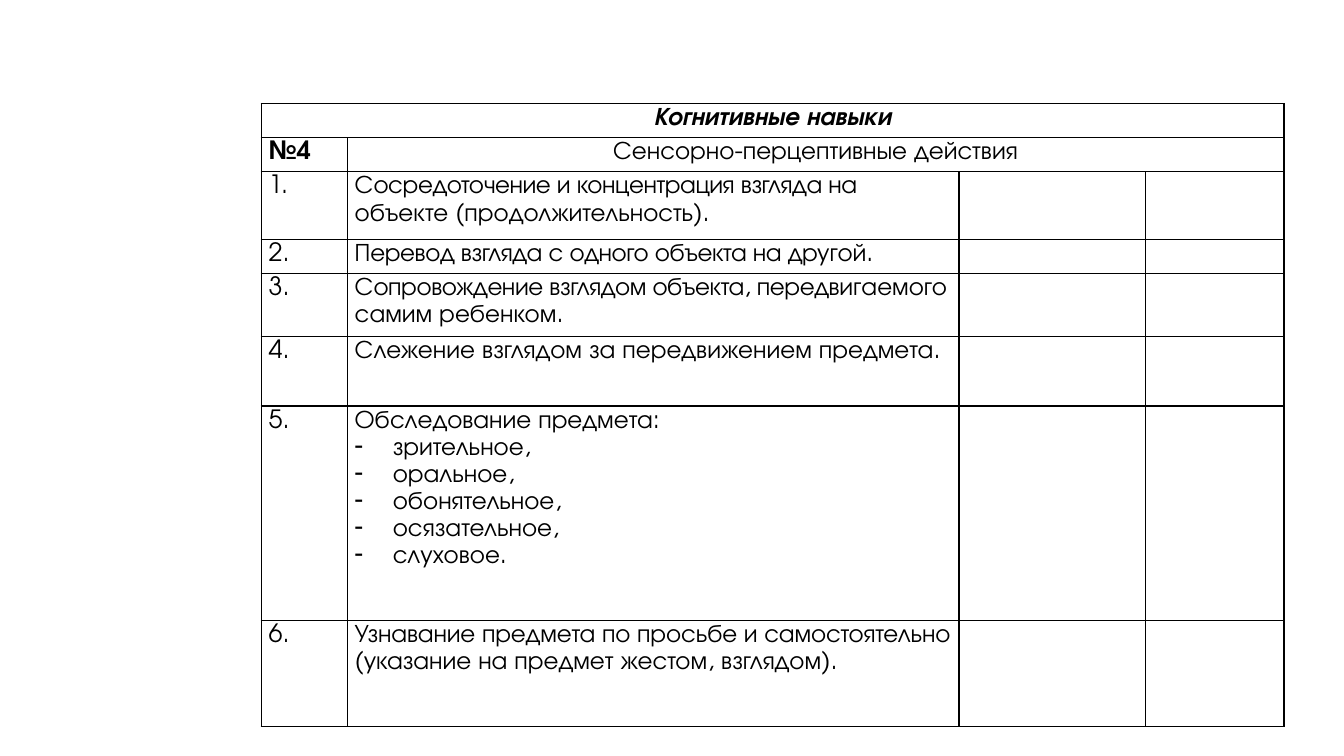
from pptx import Presentation
from pptx import util as u
from pptx.dml.color import RGBColor
from pptx.enum import text
from pptx.oxml import parse_xml
from pptx.oxml.ns import nsdecls

FONT = "TeX Gyre Adventor"
BLACK = "000000"
COLUMN_WIDTHS = [2.17, 15.42, 4.69, 3.5]
ROW_HEIGHTS = [0.86, 0.86, 1.7, 0.86, 1.58, 1.76, 5.41, 2.66]
SENSES = ["зрительное,", "оральное,", "обонятельное,", "осязательное,", "слуховое."]

# Each skill is a list of (words, letter spacing in points)
SKILLS = [
    [("С", -0.6), ("осредоточение и концентрация взгляда на ", -0.3),
     ("объекте (продолжительность).", 0)],
    [("П", -0.5), ("еревод взгляда с одного объекта на дру", -0.3), ("гой.", 0)],
    [("С", -0.6), ("опровождение взглядом объекта, передви", -0.3),
     ("гаемого самим ребенком", 0), (".", 0.1)],
    [("Слежение взглядом за передвижением предмета.", 0)],
    [("Обследование предмета:", 0)],
    [("Узнавание предмета по просьбе и самостоятельно (ука", -0.1),
     ("зание на предмет жестом, взглядом).", 0)],
]


def color(hex_code):
    return RGBColor.from_string(hex_code)


def write(paragraph, parts, align=text.PP_ALIGN.LEFT, bold=False, italic=False):
    paragraph.alignment = align
    paragraph.line_spacing = 1.15
    for words, spacing in parts:
        run = paragraph.add_run()
        run.text = words
        font = run.font
        font.name, font.size = FONT, u.Pt(18)
        font.bold, font.italic = bold, italic
        font.color.rgb = color(BLACK)
        if spacing:
            run._r.get_or_add_rPr().set("spc", str(round(spacing * 100)))


def add_dash_item(frame, words):
    item = frame.add_paragraph()
    properties = item._p.get_or_add_pPr()
    properties.set("marL", str(u.Cm(0.96)))
    properties.set("indent", str(-u.Cm(0.96)))
    properties.append(parse_xml(f'<a:buChar {nsdecls("a")} char="-"/>'))
    write(item, [(words, 0)])


def outline(cell):
    properties = cell._tc.get_or_add_tcPr()
    for side in ("lnL", "lnR", "lnT", "lnB"):
        properties.append(parse_xml(
            f'<a:{side} {nsdecls("a")} w="{u.Pt(1)}"><a:solidFill>'
            f'<a:srgbClr val="{BLACK}"/></a:solidFill></a:{side}>'))
    cell.fill.background()


def add_grid(slide):
    grid = slide.shapes.add_table(
        len(ROW_HEIGHTS), len(COLUMN_WIDTHS), u.Cm(6.58), u.Cm(2.61),
        u.Cm(sum(COLUMN_WIDTHS)), u.Cm(sum(ROW_HEIGHTS))).table
    grid.first_row = grid.horz_banding = False
    for column, width in zip(grid.columns, COLUMN_WIDTHS):
        column.width = u.Cm(width)
    for row, height in zip(grid.rows, ROW_HEIGHTS):
        row.height = u.Cm(height)
    for cell in grid.iter_cells():
        cell.margin_left = cell.margin_right = u.Cm(0.19)
        cell.margin_top = cell.margin_bottom = 0
        outline(cell)
    return grid


def main():
    prs = Presentation()
    prs.slide_width, prs.slide_height = u.Cm(33.87), u.Cm(19.05)
    slide = prs.slides.add_slide(prs.slide_layouts[6])
    grid = add_grid(slide)

    def first_line(row, column):
        return grid.cell(row, column).text_frame.paragraphs[0]

    # Headings
    grid.cell(0, 0).merge(grid.cell(0, 3))
    grid.cell(1, 1).merge(grid.cell(1, 3))
    center, justify = text.PP_ALIGN.CENTER, text.PP_ALIGN.JUSTIFY
    write(first_line(0, 0), [("Когнитивные навыки", 0)], center, bold=True, italic=True)
    write(first_line(1, 0), [("№4", 0)], justify, bold=True)
    write(first_line(1, 1), [("Сенсорно-перцептивные действия", 0)], center)

    # Numbered skills
    for number, skill in enumerate(SKILLS, 1):
        write(first_line(number + 1, 0), [(f"{number}.", 0)], justify)
        write(first_line(number + 1, 1), skill)

    # Ways of examining an object
    for sense in SENSES:
        add_dash_item(grid.cell(6, 1).text_frame, sense)

    prs.save("out.pptx")


if __name__ == "__main__":
    main()
